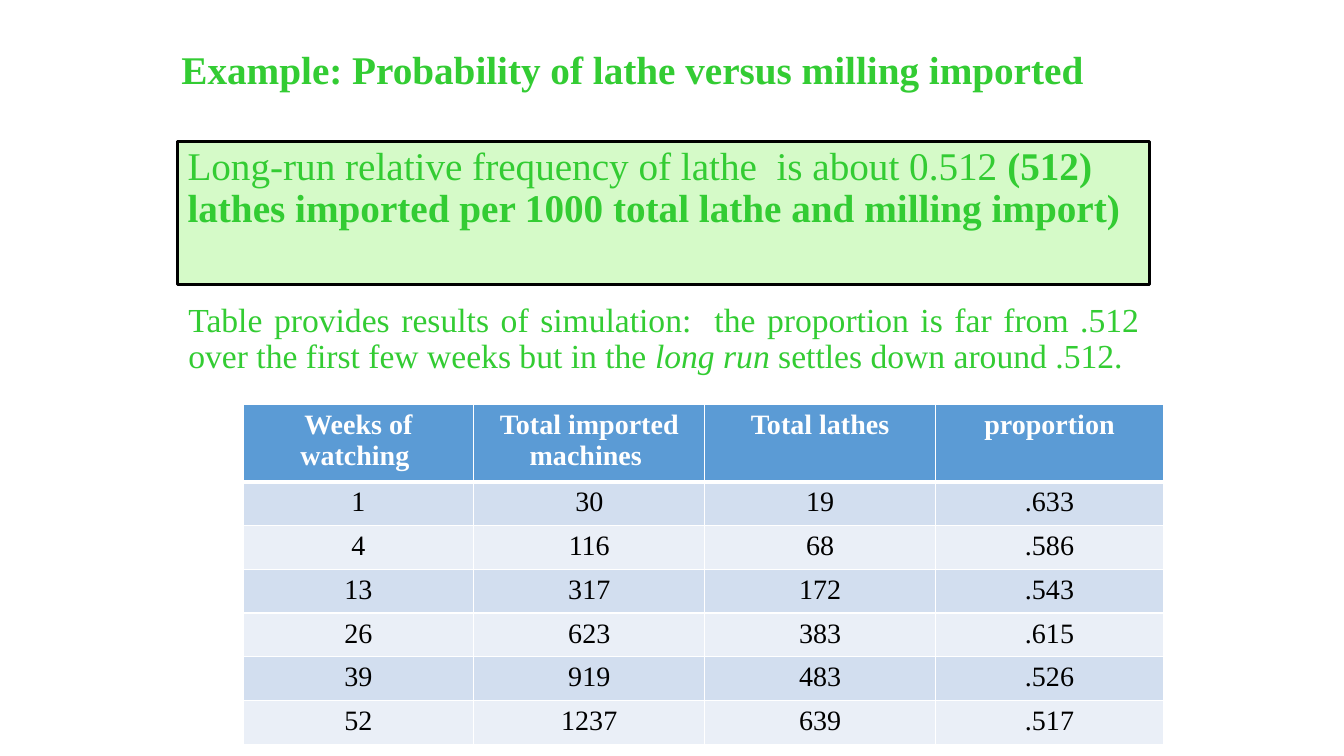
from lxml import etree
from pptx import Presentation
from pptx import util as u
from pptx.dml.color import RGBColor
from pptx.enum import text
from pptx.oxml import ns

GREEN = RGBColor(0x33, 0xCC, 0x33)
PALE_GREEN = RGBColor(0xD5, 0xFA, 0xC8)
BLACK = RGBColor(0, 0, 0)
WHITE = RGBColor(0xFF, 0xFF, 0xFF)
HEADER_BLUE = RGBColor(0x5B, 0x9B, 0xD5)
BANDS = (RGBColor(0xD2, 0xDE, 0xEF), RGBColor(0xEA, 0xEF, 0xF7))
FONT = "Times New Roman"

COLUMN_WIDTHS = (2.29, 2.29, 2.29, 2.26)
HEADER_HEIGHT, ROW_HEIGHT = 0.77, 0.43
TABLE_ROWS = (
    ("Weeks of watching ", "Total imported machines ", "Total lathes", "proportion"),
    ("1", "30", "19", ".633"),
    ("4", "116", "68", ".586"),
    ("13", "317", "172", ".543"),
    ("26", "623", "383", ".615"),
    ("39", "919", "483", ".526"),
    ("52", "1237", "639", ".517"),
)


def write_text(frame, *pieces, size, color, align=text.PP_ALIGN.LEFT,
               line_spacing=None, bold=False):
    frame.word_wrap = True
    para = frame.paragraphs[0]
    properties = para._p.get_or_add_pPr()
    properties.set("marL", "0")
    properties.set("indent", "0")
    etree.SubElement(properties, ns.qn("a:buNone"))
    para.alignment = align
    para.space_before = u.Pt(0)
    if line_spacing:
        para.line_spacing = line_spacing
    for words, style in pieces:
        span = para.add_run()
        span.text = words
        span.font.name = FONT
        span.font.size = u.Pt(size)
        span.font.color.rgb = color
        span.font.bold = bold or style == "bold"
        span.font.italic = style == "italic"


def place(shape, left, top, width, height):
    shape.left, shape.top = u.Inches(left), u.Inches(top)
    shape.width, shape.height = u.Inches(width), u.Inches(height)


def add_title(page):
    box = page.shapes.title
    place(box, 1.7, 0.13, 9.29, 1.17)
    frame = box.text_frame
    frame.auto_size = text.MSO_AUTO_SIZE.NONE
    frame.vertical_anchor = text.MSO_ANCHOR.MIDDLE
    write_text(frame, ("Example: Probability of lathe versus milling imported", "bold"),
               size=28, color=GREEN, line_spacing=0.9)


def add_frequency_box(page):
    box = page.placeholders[1]
    place(box, 1.76, 1.4, 9.64, 1.42)
    box.fill.solid()
    box.fill.fore_color.rgb = PALE_GREEN
    box.line.color.rgb = BLACK
    box.line.width = u.Pt(2.25)
    box.text_frame.auto_size = text.MSO_AUTO_SIZE.NONE
    write_text(box.text_frame,
               ("Long-run relative frequency of lathe  is about 0.512 ", None),
               ("(512) lathes imported per 1000 total lathe and milling import)", "bold"),
               size=28, color=GREEN, line_spacing=0.9)


def add_simulation_note(page):
    box = page.shapes.add_textbox(u.Inches(1.77), u.Inches(2.96),
                                  u.Inches(9.63), u.Inches(1.26))
    write_text(box.text_frame,
               ("Table provides results of simulation:  the proportion is far from .512 "
                "over the first few weeks but in the ", None),
               ("long run", "italic"),
               (" settles down around .512.", None),
               size=24, color=GREEN, align=text.PP_ALIGN.JUSTIFY, line_spacing=0.9)


def set_borders(cell, bottom):
    properties = cell._tc.get_or_add_tcPr()
    for side, points in (("L", 1), ("R", 1), ("T", 1), ("B", bottom)):
        line = etree.SubElement(properties, ns.qn(f"a:ln{side}"), w=str(u.Pt(points)))
        fill = etree.SubElement(line, ns.qn("a:solidFill"))
        etree.SubElement(fill, ns.qn("a:srgbClr"), val=str(WHITE))


def add_results_table(page):
    height = HEADER_HEIGHT + ROW_HEIGHT * (len(TABLE_ROWS) - 1)
    table = page.shapes.add_table(
        len(TABLE_ROWS), len(COLUMN_WIDTHS), u.Inches(2.41), u.Inches(4.01),
        u.Inches(sum(COLUMN_WIDTHS)), u.Inches(height)).table
    for column, width in zip(table.columns, COLUMN_WIDTHS):
        column.width = u.Inches(width)
    for index, values in enumerate(TABLE_ROWS):
        header = index == 0
        table.rows[index].height = u.Inches(HEADER_HEIGHT if header else ROW_HEIGHT)
        for cell, value in zip(table.rows[index].cells, values):
            set_borders(cell, bottom=3 if header else 1)
            cell.fill.solid()
            cell.fill.fore_color.rgb = HEADER_BLUE if header else BANDS[(index - 1) % 2]
            write_text(cell.text_frame, (value, None), size=20, bold=header,
                       color=WHITE if header else BLACK, align=text.PP_ALIGN.CENTER)


def main():
    deck = Presentation()
    deck.slide_width, deck.slide_height = u.Inches(13.33), u.Inches(7.5)
    page = deck.slides.add_slide(deck.slide_layouts[1])
    add_title(page)
    add_frequency_box(page)
    add_simulation_note(page)
    add_results_table(page)
    deck.save("out.pptx")


if __name__ == "__main__":
    main()
